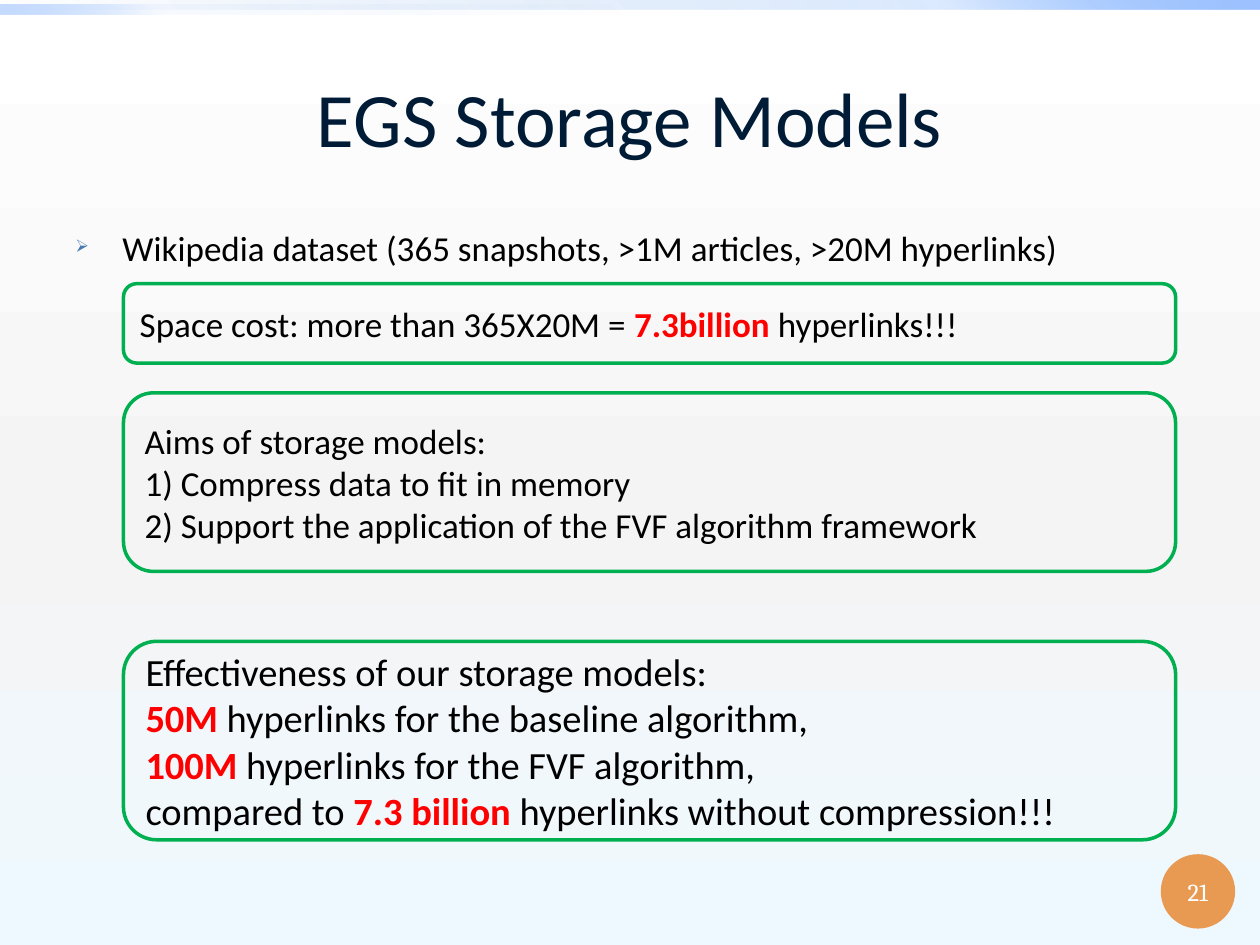
from lxml.etree import SubElement
from pptx import Presentation
from pptx.dml.color import RGBColor
from pptx.enum.shapes import MSO_SHAPE
from pptx.enum.text import MSO_ANCHOR, PP_ALIGN
from pptx.oxml.ns import qn
from pptx.util import Cm, Pt

NAVY = RGBColor(0x00, 0x1B, 0x36)
BLACK = RGBColor(0x00, 0x00, 0x00)
WHITE = RGBColor(0xFF, 0xFF, 0xFF)
RED = RGBColor(0xFF, 0x00, 0x00)
GREEN = RGBColor(0x00, 0xB0, 0x50)
ORANGE = RGBColor(0xE8, 0x9A, 0x53)
BULLET_BLUE = RGBColor(0x47, 0x7A, 0xB1)
DEEP_BLUE = RGBColor(0x00, 0x58, 0xB7)
MID_BLUE = RGBColor(0x4F, 0x95, 0xFF)
PALE_BLUE = RGBColor(0x9E, 0xC2, 0xFF)
LIGHT_GREY = RGBColor(0xF4, 0xF4, 0xF4)
ICE = RGBColor(0xEE, 0xF9, 0xFF)

# Content: a line is a list of spans, and starred spans are highlighted
TITLE = "EGS Storage Models"
BULLET = "Wikipedia dataset (365 snapshots, >1M articles, >20M hyperlinks)"
PAGE_NUMBER = "21"
# top, height (cm), text size, lines
PANELS = [
    (5.72, 1.6, 20, [["Space cost: more than 365X20M = ", "*7.3billion", " hyperlinks!!!"]]),
    (7.92, 3.6, 20, [
        ["Aims of storage models:"],
        ["1) Compress data to fit in memory"],
        ["2) Support the application of the FVF algorithm framework"],
    ]),
    (12.93, 4.0, 22, [
        ["Effectiveness of our storage models:"],
        ["*50M", " hyperlinks for the baseline algorithm,"],
        ["*100M ", "hyperlinks for the FVF algorithm,"],
        ["compared to ", "*7.3 billion", " hyperlinks without compression!!!"],
    ]),
]
PANEL_LEFT, PANEL_WIDTH = 2.49, 21.21

# Gradient stops: position %, colour, opacity %
PAGE_STOPS = [(0, WHITE, 100), (55, LIGHT_GREY, 100), (100, ICE, 100)]
# left, top, width, height (cm), angle, stops
BARS = [
    (0, 0, 25.4, 0.2, 315,
     [(0, DEEP_BLUE, 0), (75, MID_BLUE, 20), (100, PALE_BLUE, 100)]),
    (0, 0.1, 12.7, 0.2, 135,
     [(0, DEEP_BLUE, 0), (75, MID_BLUE, 5), (100, PALE_BLUE, 60)]),
]


def set_gradient(fill, element, angle, stops):
    fill.gradient()
    gradient = next(element.iter(qn("a:gradFill")))
    stop_list = gradient.find(qn("a:gsLst"))
    for old_stop in list(stop_list):
        stop_list.remove(old_stop)
    for position, color, opacity in stops:
        stop = SubElement(stop_list, qn("a:gs"), pos=str(position * 1000))
        color_node = SubElement(stop, qn("a:srgbClr"), val=str(color))
        if opacity < 100:
            SubElement(color_node, qn("a:alpha"), val=str(opacity * 1000))
    gradient.find(qn("a:lin")).set("ang", str(angle * 60000))


def style_font(font, size, color, name="Calibri"):
    font.name, font.size = name, Pt(size)
    font.color.rgb = color


def add_plain_shape(page, kind, *place):
    shape = page.shapes.add_shape(kind, *map(Cm, place))
    shape.shadow.inherit = False
    shape.line.fill.background()
    return shape


def add_text_box(page, place, text):
    box = page.shapes.add_textbox(*map(Cm, place))
    box.text_frame.word_wrap = True
    para = box.text_frame.paragraphs[0]
    para.text = text
    return box, para


def add_panel(page, top, height, size, lines):
    panel = add_plain_shape(page, MSO_SHAPE.ROUNDED_RECTANGLE,
                            PANEL_LEFT, top, PANEL_WIDTH, height)
    panel.fill.background()
    panel.line.color.rgb = GREEN
    panel.line.width = Pt(2)
    frame = panel.text_frame
    frame.vertical_anchor = MSO_ANCHOR.MIDDLE
    for index, line in enumerate(lines):
        para = frame.add_paragraph() if index else frame.paragraphs[0]
        para.alignment = PP_ALIGN.LEFT
        style_font(para.font, size, BLACK)
        for text in line:
            span = para.add_run()
            span.text = text.removeprefix("*")
            highlighted = text.startswith("*")
            span.font.bold = highlighted
            span.font.color.rgb = RED if highlighted else BLACK


def main():
    deck = Presentation()
    deck.slide_width, deck.slide_height = Cm(25.4), Cm(19.05)
    page = deck.slides.add_slide(deck.slide_layouts[6])

    # Background and top bars
    set_gradient(page.background.fill, page.element, 90, PAGE_STOPS)
    for *place, angle, stops in BARS:
        bar = add_plain_shape(page, MSO_SHAPE.RECTANGLE, *place)
        set_gradient(bar.fill, bar.element, angle, stops)

    # Page number
    badge = add_plain_shape(page, MSO_SHAPE.OVAL, 23.4, 17.22, 1.5, 1.5)
    badge.fill.solid()
    badge.fill.fore_color.rgb = ORANGE
    frame = badge.text_frame
    frame.margin_left = frame.margin_right = 0
    frame.vertical_anchor = MSO_ANCHOR.MIDDLE
    para = frame.paragraphs[0]
    para.text = PAGE_NUMBER
    para.alignment = PP_ALIGN.CENTER
    style_font(para.font, 14, WHITE, "Cambria")

    # Title
    box, para = add_text_box(page, (1.27, 0.76, 22.86, 3.18), TITLE)
    box.text_frame.vertical_anchor = MSO_ANCHOR.MIDDLE
    para.alignment = PP_ALIGN.CENTER
    style_font(para.font, 44, NAVY)

    # Bullet line
    box, para = add_text_box(page, (1.27, 4.45, 23.24, 3.07), BULLET)
    properties = para._p.get_or_add_pPr()
    properties.set("marL", str(Cm(0.95)))
    properties.set("indent", str(-Cm(0.95)))
    bullet_color = SubElement(properties, qn("a:buClr"))
    SubElement(bullet_color, qn("a:srgbClr"), val=str(BULLET_BLUE))
    SubElement(properties, qn("a:buSzPct"), val="50000")
    SubElement(properties, qn("a:buChar"), char="➢")
    style_font(para.font, 20, BLACK)

    # Green panels
    for panel in PANELS:
        add_panel(page, *panel)

    deck.save("out.pptx")


if __name__ == "__main__":
    main()
